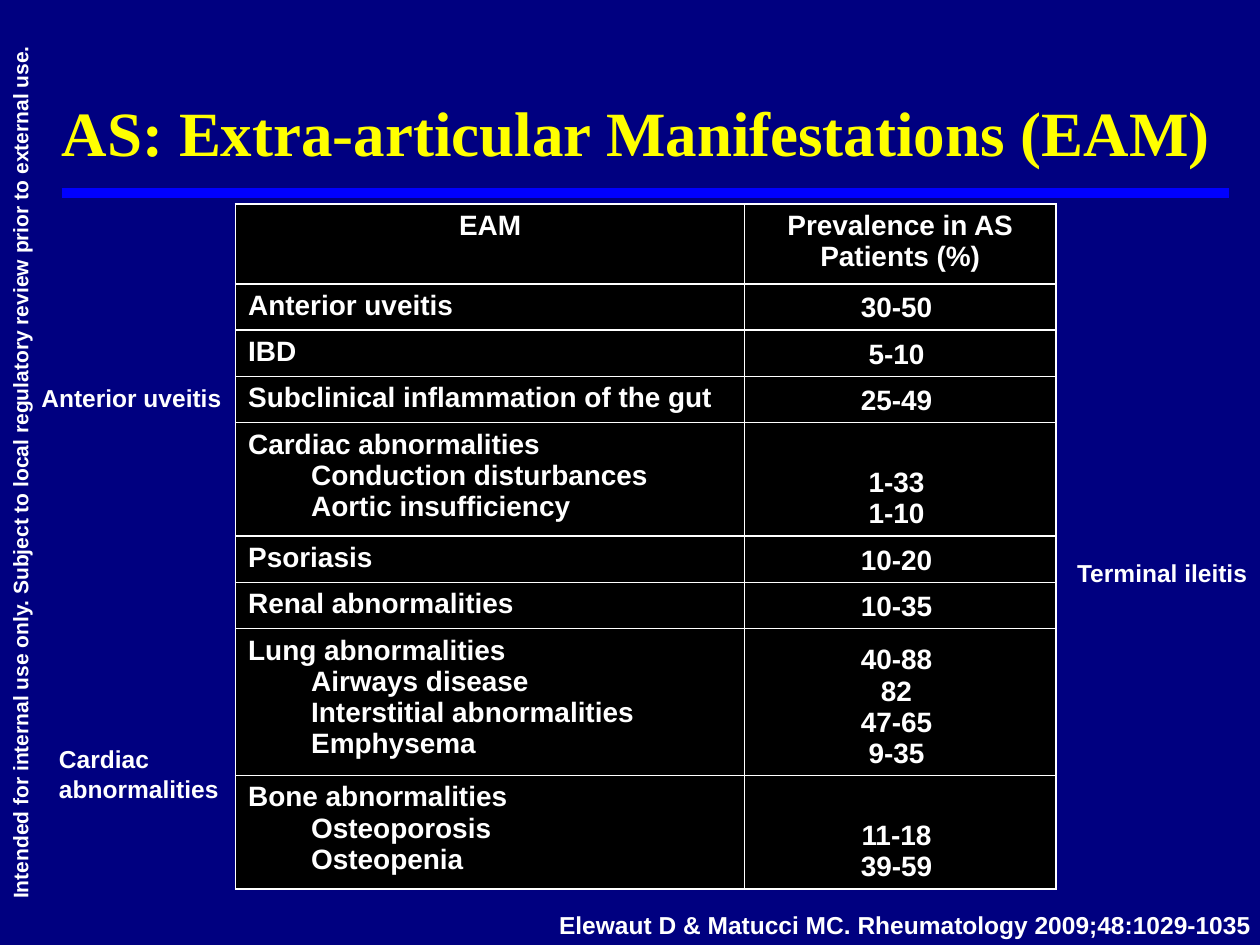
from pptx import Presentation
from pptx.dml.color import RGBColor
from pptx.enum.shapes import MSO_CONNECTOR
from pptx.enum.text import MSO_ANCHOR, MSO_AUTO_SIZE, PP_ALIGN
from pptx.oxml.ns import qn
from pptx.util import Inches, Pt
from lxml import etree

NAVY = RGBColor(0x00, 0x00, 0x80)
BLUE = RGBColor(0x00, 0x00, 0xFF)
YELLOW = RGBColor(0xFF, 0xFF, 0x00)
WHITE = RGBColor(0xFF, 0xFF, 0xFF)
BLACK = RGBColor(0x00, 0x00, 0x00)
LEFT, CENTER, RIGHT = PP_ALIGN.LEFT, PP_ALIGN.CENTER, PP_ALIGN.RIGHT
TOP, MIDDLE, BOTTOM = MSO_ANCHOR.TOP, MSO_ANCHOR.MIDDLE, MSO_ANCHOR.BOTTOM
STRAIGHT = MSO_CONNECTOR.STRAIGHT
NO_AUTOFIT = MSO_AUTO_SIZE.NONE

HEADER = ("EAM", "Prevalence in AS Patients (%)")
ROWS = [
    (["Anterior uveitis"], ["30-50"]),
    (["IBD"], ["5-10"]),
    (["Subclinical inflammation of the gut"], ["25-49"]),
    (["Cardiac abnormalities", "Conduction disturbances", "Aortic insufficiency"],
     ["1-33", "1-10"]),
    (["Psoriasis"], ["10-20"]),
    (["Renal abnormalities"], ["10-35"]),
    (["Lung abnormalities", "Airways disease", "Interstitial abnormalities", "Emphysema"],
     ["40-88", "82", "47-65", "9-35"]),
    (["Bone abnormalities", "Osteoporosis", "Osteopenia"], ["11-18", "39-59"]),
]
LABELS = [
    (["Terminal ileitis"], (8.45, 4.38, 1.56, 0.34)),
    (["Anterior uveitis"], (0.23, 2.99, 1.64, 0.34)),
    (["Cardiac", "abnormalities"], (0.37, 5.86, 1.47, 0.57)),
]


def write_lines(tf, lines, size, align=LEFT, color=WHITE, name="Arial"):
    """Fill a text frame with one bold paragraph per line."""
    for i, line in enumerate(lines):
        p = tf.add_paragraph() if i else tf.paragraphs[0]
        p.text = line
        p.alignment = align
        p.font.name, p.font.size, p.font.bold = name, Pt(size), True
        p.font.color.rgb = color


def add_label(s, lines, box, size=14, align=LEFT, anchor=TOP, wrap=False):
    """Place a text box and return its shape."""
    sp = s.shapes.add_textbox(*map(Inches, box))
    tf = sp.text_frame
    tf.word_wrap = wrap
    tf.vertical_anchor = anchor
    write_lines(tf, lines, size, align)
    return sp


def add_title(s, text, box):
    """Format the title placeholder and draw the rule below it."""
    x, y, w, h = box
    rule_y = Inches(y + h + 0.18)
    rule = s.shapes.add_connector(STRAIGHT, Inches(x), rule_y, Inches(x + w), rule_y)
    rule.line.color.rgb = BLUE
    rule.line.width = Pt(6)
    etree.SubElement(rule._element.spPr, qn("a:effectLst"))

    sp = s.shapes.title
    sp.left, sp.top, sp.width, sp.height = map(Inches, box)
    tf = sp.text_frame
    tf.margin_left = tf.margin_top = tf.margin_right = tf.margin_bottom = 0
    tf.vertical_anchor = BOTTOM
    tf.auto_size = NO_AUTOFIT
    write_lines(tf, [text], 36, LEFT, YELLOW, "Times New Roman")
    tf.paragraphs[0].line_spacing = 0.9


def style_cell(cell):
    """Give a cell white borders and a black fill."""
    tcPr = cell._tc.get_or_add_tcPr()
    for side in ("lnL", "lnR", "lnT", "lnB"):
        ln = etree.SubElement(tcPr, qn(f"a:{side}"), w=str(Pt(1)))
        fill = etree.SubElement(ln, qn("a:solidFill"))
        etree.SubElement(fill, qn("a:srgbClr"), val=str(WHITE))
    cell.fill.solid()
    cell.fill.fore_color.rgb = BLACK


def add_prevalence_table(s, box):
    """Build the table, with row heights that follow the line counts."""
    x, y, w, h = map(Inches, box)
    table = s.shapes.add_table(len(ROWS) + 1, 2, x, y, w, h).table
    table.columns[0].width = Inches(4.04)
    table.columns[1].width = w - Inches(4.04)
    table.rows[0].height = Inches(0.57)
    for cell, text in zip(table.rows[0].cells, HEADER):
        style_cell(cell)
        write_lines(cell.text_frame, [text], 16, CENTER)
    for i, (names, values) in enumerate(ROWS, 1):
        table.rows[i].height = Inches(0.09 + 0.24 * len(names))
        name_cell, value_cell = table.rows[i].cells
        style_cell(name_cell)
        write_lines(name_cell.text_frame, names, 16)
        for p in name_cell.text_frame.paragraphs[1:]:
            p._p.get_or_add_pPr().set("marL", str(Inches(0.5)))
        style_cell(value_cell)
        value_cell.margin_right = Inches(0.16)
        value_cell.vertical_anchor = BOTTOM
        write_lines(value_cell.text_frame, values, 16, CENTER)


def main():
    """Build and save the slide."""
    prs = Presentation()
    prs.slide_width, prs.slide_height = Inches(10), Inches(7.5)
    s = prs.slides.add_slide(prs.slide_layouts[5])
    s.background.fill.solid()
    s.background.fill.fore_color.rgb = NAVY

    notice = "Intended for internal use only. Subject to local regulatory review prior to external use."
    sp = add_label(s, [notice], (-3.59, 3.6, 7.5, 0.3), 12, CENTER, wrap=True)
    sp.rotation = 270
    add_title(s, "AS: Extra-articular Manifestations (EAM)", (0.49, 0.8, 9.26, 0.55))
    add_prevalence_table(s, (1.87, 1.62, 6.51, 5.1))
    add_label(s, ["Elewaut D & Matucci MC. Rheumatology 2009;48:1029-1035"],
              (3.41, 7.19, 6.62, 0.3), align=RIGHT, anchor=MIDDLE)
    for lines, box in LABELS:
        add_label(s, lines, box)
    prs.save("out.pptx")


if __name__ == "__main__":
    main()
